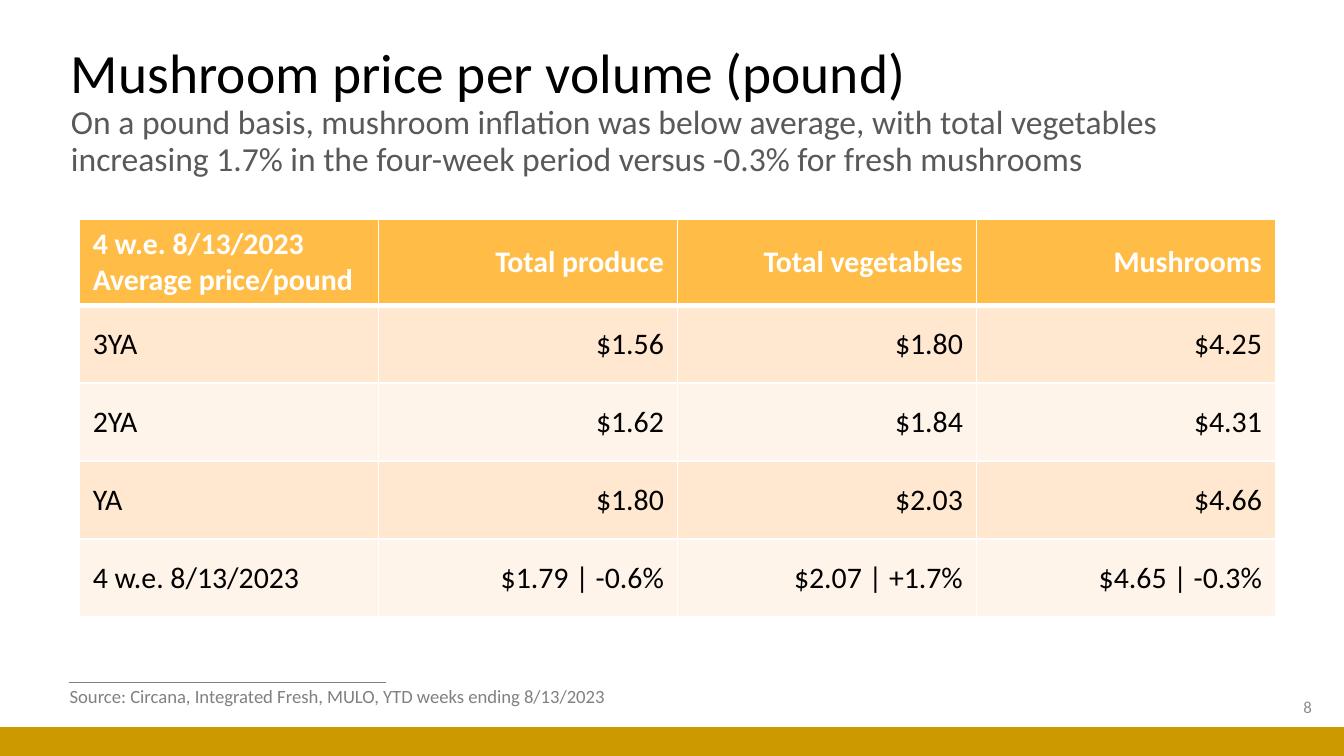
from lxml import etree
from pptx import Presentation
from pptx.dml.color import RGBColor
from pptx.enum import shapes, text
from pptx.oxml.ns import qn
from pptx.util import Inches, Pt

WHITE = RGBColor(0xFF, 0xFF, 0xFF)
BLACK = RGBColor(0, 0, 0)
DARK_GREY = RGBColor(0x59, 0x59, 0x59)
GREY = RGBColor(0x80, 0x80, 0x80)
LIGHT_GREY = RGBColor(0x8C, 0x8C, 0x8C)
GOLD = RGBColor(0xCC, 0x99, 0x00)
HEADER_FILL = RGBColor(0xFF, 0xBD, 0x47)
BAND_FILLS = (RGBColor(0xFF, 0xE8, 0xCF), RGBColor(0xFF, 0xF4, 0xE9))

LEFT, RIGHT = text.PP_ALIGN.LEFT, text.PP_ALIGN.RIGHT
TOP, MIDDLE = text.MSO_ANCHOR.TOP, text.MSO_ANCHOR.MIDDLE

# Content
TITLE = "Mushroom price per volume (pound)"
SUBTITLE = (
    "On a pound basis, mushroom inflation was below average, with total vegetables",
    "increasing 1.7% in the four-week period versus -0.3% for fresh mushrooms",
)
SOURCE = "Source: Circana, Integrated Fresh, MULO, YTD weeks ending 8/13/2023"
PAGE_NUMBER = "8"
PRICES = [
    ("4 w.e. 8/13/2023\nAverage price/pound", "Total produce", "Total vegetables", "Mushrooms"),
    ("3YA", "$1.56", "$1.80", "$4.25"),
    ("2YA", "$1.62", "$1.84", "$4.31"),
    ("YA", "$1.80", "$2.03", "$4.66"),
    ("4 w.e. 8/13/2023", "$1.79 | -0.6%", "$2.07 | +1.7%", "$4.65 | -0.3%"),
]

# Layout: a 16:9 slide, lengths in inches
SLIDE_WIDTH = 10
SLIDE_HEIGHT = SLIDE_WIDTH * 9 / 16
BAR_TOP = 5.41
TABLE_LEFT, TABLE_TOP, TABLE_WIDTH, TABLE_HEIGHT = 0.59, 1.63, 8.9, 2.96
ROW_HEIGHT = 0.58
HEADER_HEIGHT = TABLE_HEIGHT - ROW_HEIGHT * (len(PRICES) - 1)


def set_font(font, size, color, bold=False):
    for name, value in {"name": "Calibri", "size": Pt(size), "bold": bold}.items():
        setattr(font, name, value)
    font.color.rgb = color


def add_run(paragraph, words, size, color):
    run = paragraph.add_run()
    run.text = words
    set_font(run.font, size, color)


def add_text_box(slide, box, anchor, alignment=LEFT, wrap=True):
    frame = slide.shapes.add_textbox(*map(Inches, box)).text_frame
    frame.word_wrap = wrap
    frame.vertical_anchor = anchor
    paragraph = frame.paragraphs[0]
    paragraph.alignment = alignment
    return paragraph


def set_borders(cell, widths):
    properties = cell._tc.get_or_add_tcPr()
    for side, width in widths.items():
        line = etree.SubElement(properties, qn(f"a:ln{side}"), w=str(Pt(width)))
        fill = etree.SubElement(line, qn("a:solidFill"))
        etree.SubElement(fill, qn("a:srgbClr"), val=str(WHITE))


def fill_cell(cell, words, row, column):
    is_header = row == 0
    set_borders(cell, {"L": 1, "R": 1, "T": 3 if row == 1 else 1, "B": 3 if is_header else 1})
    cell.fill.solid()
    cell.fill.fore_color.rgb = HEADER_FILL if is_header else BAND_FILLS[(row - 1) % 2]
    cell.vertical_anchor = MIDDLE
    cell.text = words
    for paragraph in cell.text_frame.paragraphs:
        paragraph.alignment = RIGHT if column else LEFT
        for run in paragraph.runs:
            set_font(run.font, 16, WHITE if is_header else BLACK, is_header)


def add_price_table(slide):
    row_count, column_count = len(PRICES), len(PRICES[0])
    box = map(Inches, (TABLE_LEFT, TABLE_TOP, TABLE_WIDTH, TABLE_HEIGHT))
    table = slide.shapes.add_table(row_count, column_count, *box).table
    for column in table.columns:
        column.width = Inches(TABLE_WIDTH / column_count)
    for row, values in enumerate(PRICES):
        table.rows[row].height = Inches(ROW_HEIGHT if row else HEADER_HEIGHT)
        for column, words in enumerate(values):
            fill_cell(table.cell(row, column), words, row, column)


def main():
    presentation = Presentation()
    presentation.slide_width = Inches(SLIDE_WIDTH)
    presentation.slide_height = Inches(SLIDE_HEIGHT)
    slide = presentation.slides.add_slide(presentation.slide_layouts[6])

    # Footer rule and bar
    rule = slide.shapes.add_connector(
        shapes.MSO_CONNECTOR.STRAIGHT, *map(Inches, (0.51, 5.08, 2.87, 5.08))
    )
    rule.line.color.rgb = GREY
    rule.line.width = Pt(0.5)
    etree.SubElement(rule._element.spPr, qn("a:effectLst"))
    bar_box = (0, BAR_TOP, SLIDE_WIDTH, SLIDE_HEIGHT - BAR_TOP)
    bar = slide.shapes.add_shape(shapes.MSO_SHAPE.RECTANGLE, *map(Inches, bar_box))
    bar.shadow.inherit = False
    bar.fill.solid()
    bar.fill.fore_color.rgb = GOLD
    bar.line.fill.background()

    # Title with subtitle
    heading = add_text_box(slide, (0.43, 0.36, 9.43, 0.95), MIDDLE)
    heading.line_spacing = 0.9
    add_run(heading, TITLE, 29.7, BLACK)
    for line in SUBTITLE:
        heading.add_line_break()
        add_run(heading, line, 18, DARK_GREY)

    add_price_table(slide)

    # Page number and source
    number = add_text_box(slide, (7.61, 5.11, 2.25, 0.3), MIDDLE, RIGHT)
    add_run(number, PAGE_NUMBER, 9, LIGHT_GREY)
    source = add_text_box(slide, (0.42, 5.05, 4.31, 0.27), TOP, wrap=False)
    add_run(source, SOURCE, 10, GREY)

    presentation.save("out.pptx")


if __name__ == "__main__":
    main()
